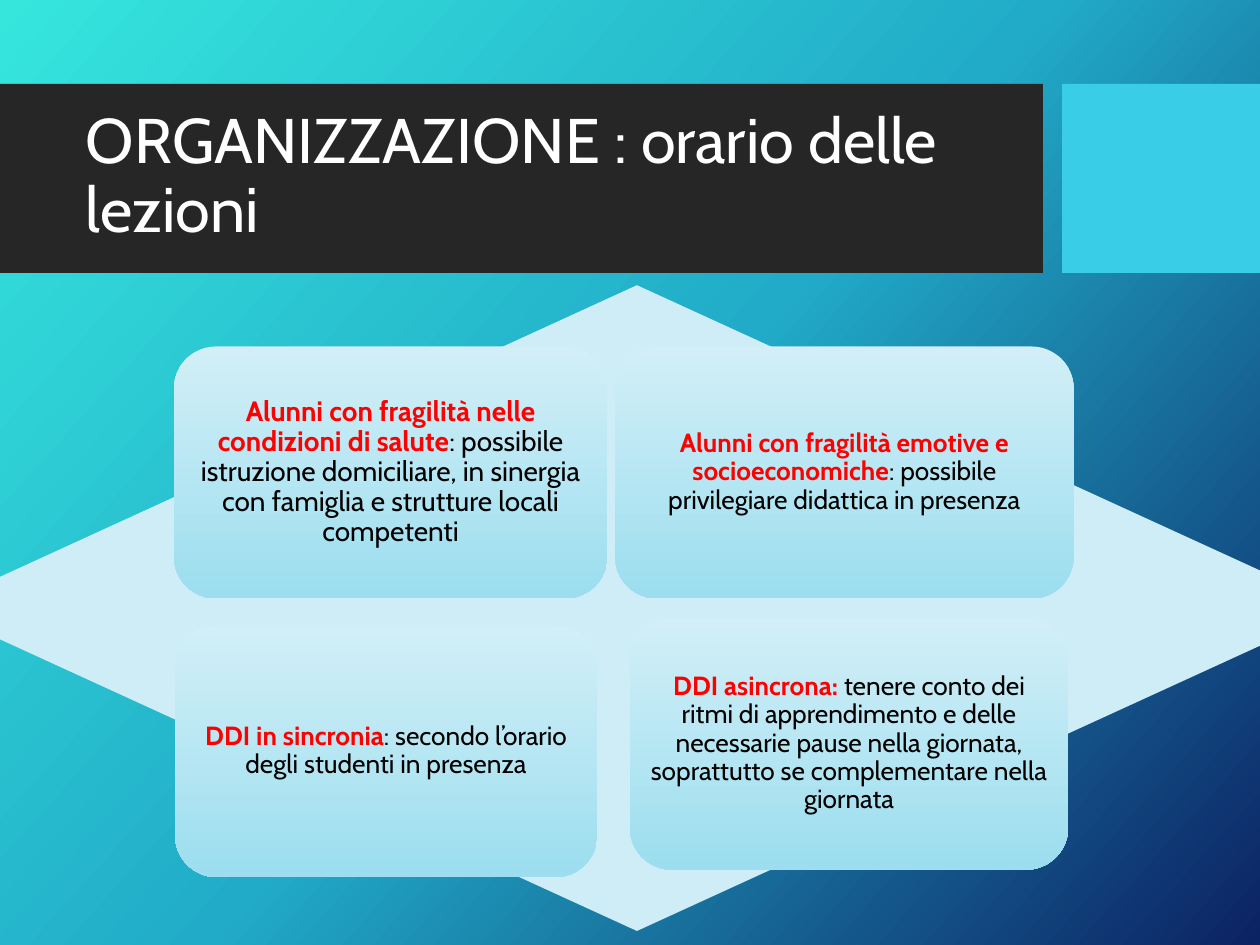
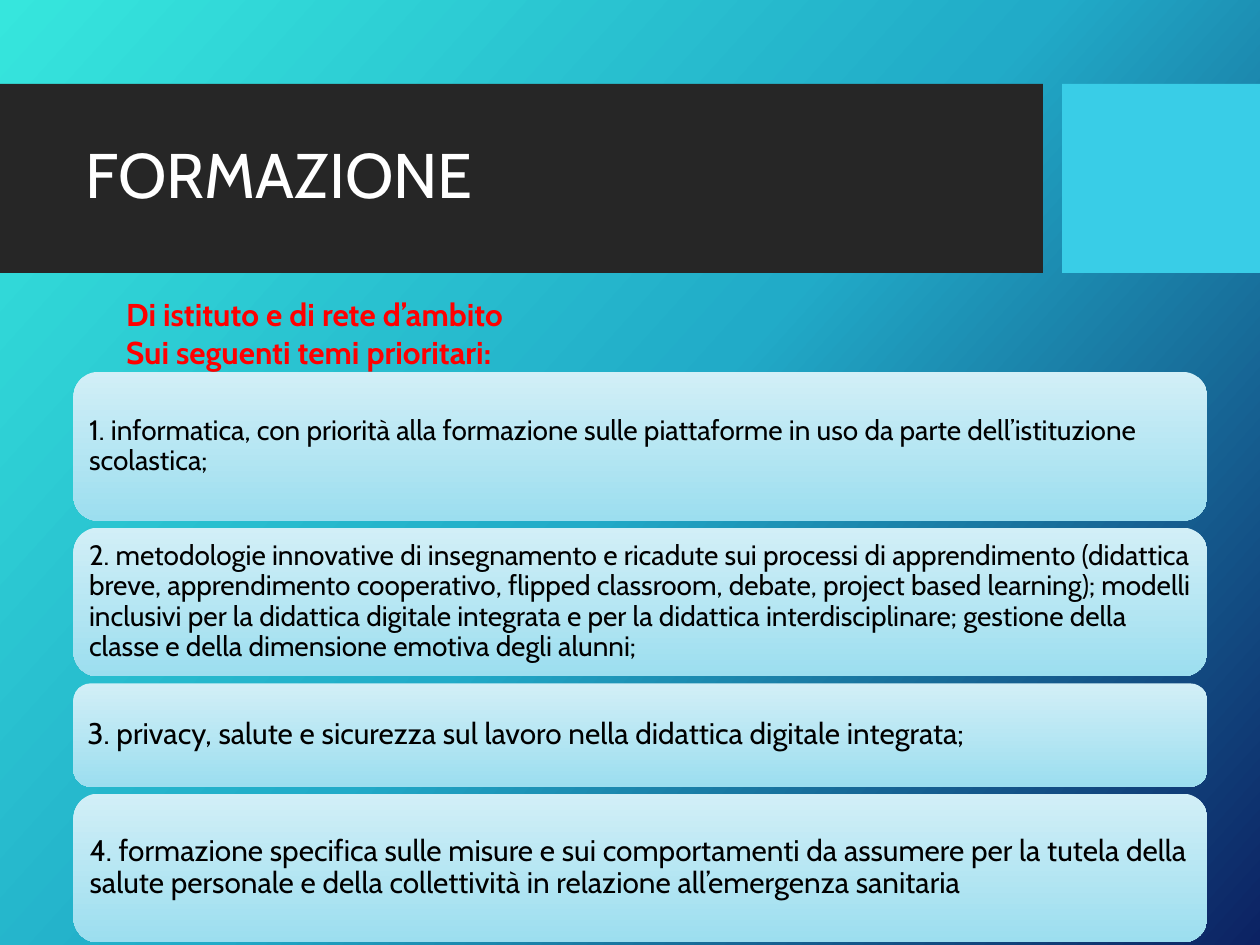
from copy import deepcopy
from dataclasses import dataclass

from pptx import Presentation
from pptx.dml.color import RGBColor
from pptx.dml.fill import FillFormat
from pptx.enum.shapes import MSO_SHAPE as Shp
from pptx.enum.text import MSO_ANCHOR as Anchor, PP_ALIGN as Align
from pptx.oxml.ns import qn
from pptx.shapes.autoshape import Shape
from pptx.slide import Slide
from pptx.util import Pt

FONT = "Cabin"
WHITE, BLACK, RED = "FFFFFF", "000000", "FF0000"
BAND, ACCENT, DIAMOND = "262626", "39CDE7", "CEEDF6"
BACKGROUND = ["36E6DD", "21ABC8", "0C2263"]
CARD = ["D2EFF7", "9CDEEF"]
BAND_TOP, BAND_HEIGHT = 48, 108
LINE_SPACING = 0.9
INSET_RATIO = 0.3


@dataclass
class Box:
    left: float
    top: float
    width: float
    height: float

    def lengths(self) -> list[Pt]:
        return [Pt(v) for v in (self.left, self.top, self.width, self.height)]


@dataclass
class Card:
    box: Box
    size: float
    text: str
    lead: str = ""
    align: Align = Align.LEFT


@dataclass
class Topic:
    height: float
    size: float
    text: str


SCHEDULE = [
    Card(Box(99.4, 198, 247.7, 144), 16,
         ": possibile istruzione domiciliare, in sinergia con famiglia e strutture locali competenti",
         "Alunni con fragilità nelle condizioni di salute", Align.CENTER),
    Card(Box(351.5, 198, 262, 144), 15,
         ": possibile privilegiare didattica in presenza",
         "Alunni con fragilità emotive e socioeconomiche", Align.CENTER),
    Card(Box(100, 357.3, 241.2, 144), 15,
         ": secondo l’orario degli studenti in presenza",
         "DDI in sincronia", Align.CENTER),
    Card(Box(360, 353, 250.4, 144), 15,
         "tenere conto dei ritmi di apprendimento e delle necessarie pause nella giornata, "
         "soprattutto se complementare nella giornata",
         "DDI asincrona: ", Align.CENTER),
]

TOPICS = [
    Topic(85, 16,
          "1. informatica, con priorità alla formazione sulle piattaforme in uso "
          "da parte dell’istituzione scolastica;"),
    Topic(85, 16,
          "2. metodologie innovative di insegnamento e ricadute sui processi di apprendimento "
          "(didattica breve, apprendimento cooperativo, flipped classroom, debate, project based "
          "learning); modelli inclusivi per la didattica digitale integrata e per la didattica "
          "interdisciplinare; gestione della classe e della dimensione emotiva degli alunni;"),
    Topic(59, 17,
          "3. privacy, salute e sicurezza sul lavoro nella didattica digitale integrata;"),
    Topic(85, 17,
          "4. formazione specifica sulle misure e sui comportamenti da assumere per la tutela "
          "della salute personale e della collettività in relazione all’emergenza sanitaria"),
]


def rgb(color: str) -> RGBColor:
    return RGBColor.from_string(color)


def add_run(p, text: str, *, size: float, color: str, bold: bool = False) -> None:
    r = p.add_run()
    r.text = text
    r.font.name = FONT
    r.font.size = Pt(size)
    r.font.bold = bold
    r.font.color.rgb = rgb(color)


def set_gradient(fill: FillFormat, element, colors: list[str], angle: float) -> None:
    fill.gradient()
    stops = element.find(".//" + qn("a:gsLst"))
    for _ in colors[2:]:
        stops.append(deepcopy(stops[0]))
    for i, (stop, color) in enumerate(zip(fill.gradient_stops, colors)):
        stop.position = i / (len(colors) - 1)
        stop.color.rgb = rgb(color)
    fill.gradient_angle = 360 - angle


def add_panel(s: Slide, kind: Shp, box: Box, color: str = "") -> Shape:
    sp = s.shapes.add_shape(kind, *box.lengths())
    sp.shadow.inherit = False
    sp.line.fill.background()
    if color:
        sp.fill.solid()
        sp.fill.fore_color.rgb = rgb(color)
    return sp


def add_textbox(s: Slide, box: Box, lines: list[str], *, size: float, color: str,
                bold: bool = False, anchor: Anchor = Anchor.TOP, spacing: float = 1.0) -> None:
    tf = s.shapes.add_textbox(*box.lengths()).text_frame
    tf.word_wrap = True
    tf.vertical_anchor = anchor
    for i, line in enumerate(lines):
        p = tf.add_paragraph() if i else tf.paragraphs[0]
        p.line_spacing = spacing
        add_run(p, line, size=size, color=color, bold=bold)


def add_card(s: Slide, card: Card) -> None:
    sp = add_panel(s, Shp.ROUNDED_RECTANGLE, card.box)
    set_gradient(sp.fill, sp._element, CARD, 90)
    tf = sp.text_frame
    tf.word_wrap = True
    tf.vertical_anchor = Anchor.MIDDLE
    inset = Pt(card.size * INSET_RATIO)
    tf.margin_left = tf.margin_right = tf.margin_top = tf.margin_bottom = inset
    p = tf.paragraphs[0]
    p.alignment = card.align
    p.line_spacing = LINE_SPACING
    if card.lead:
        add_run(p, card.lead, size=card.size, color=RED, bold=True)
    add_run(p, card.text, size=card.size, color=BLACK)


def add_titled_slide(prs: Presentation, title: str) -> Slide:
    s = prs.slides.add_slide(prs.slide_layouts[6])
    set_gradient(s.background.fill, s._element, BACKGROUND, 42)
    add_panel(s, Shp.RECTANGLE, Box(0, BAND_TOP, 596, BAND_HEIGHT), BAND)
    add_panel(s, Shp.RECTANGLE, Box(607, BAND_TOP, 113, BAND_HEIGHT), ACCENT)
    add_textbox(s, Box(42, 59, 543, 85), [title], size=36, color=WHITE,
                anchor=Anchor.MIDDLE, spacing=LINE_SPACING)
    return s


def build_schedule(prs: Presentation) -> None:
    s = add_titled_slide(prs, "ORGANIZZAZIONE : orario delle lezioni")
    add_panel(s, Shp.DIAMOND, Box(-39, 163, 806, 369), DIAMOND)
    for card in SCHEDULE:
        add_card(s, card)


def build_training(prs: Presentation) -> None:
    s = add_titled_slide(prs, "FORMAZIONE")
    top, gap = 212.5, 4
    for topic in TOPICS:
        add_card(s, Card(Box(42, top, 648, topic.height), topic.size, topic.text))
        top += topic.height + gap
    add_textbox(s, Box(65, 165, 576, 73),
                ["Di istituto e di rete d’ambito", "Sui seguenti temi prioritari:"],
                size=18, color=RED, bold=True)


def main() -> None:
    prs = Presentation()
    prs.slide_width, prs.slide_height = Pt(720), Pt(540)
    build_schedule(prs)
    build_training(prs)
    prs.save("out.pptx")


if __name__ == "__main__":
    main()
